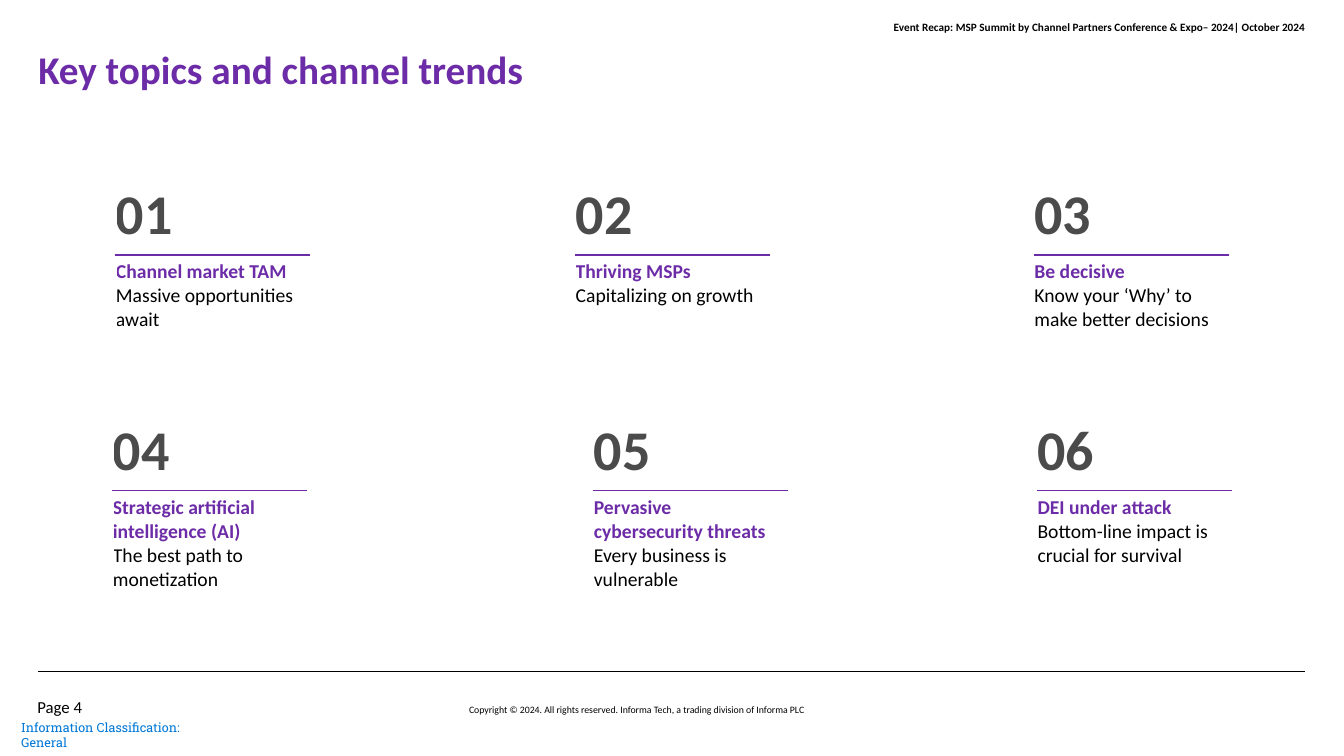
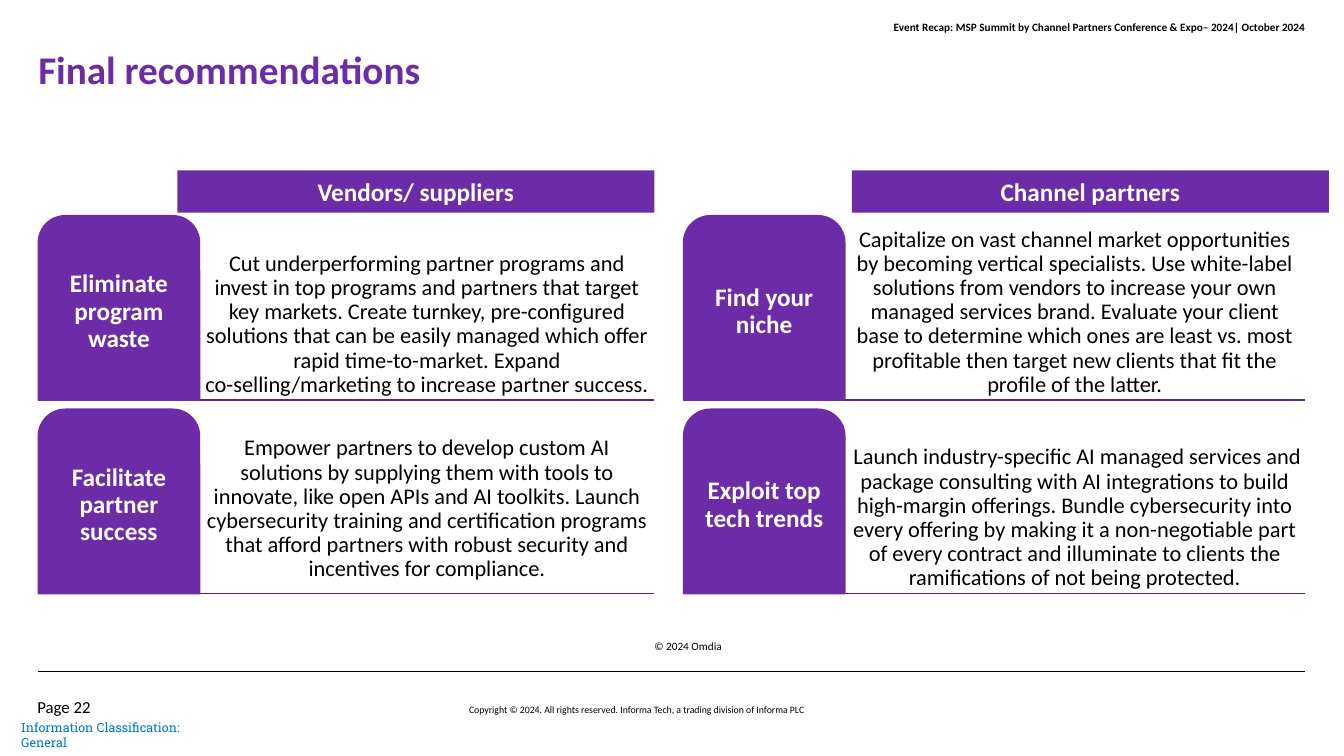
from pptx import Presentation
from pptx.dml.color import RGBColor
from pptx.enum.shapes import MSO_CONNECTOR, MSO_SHAPE
from pptx.enum.text import MSO_ANCHOR, PP_ALIGN
from pptx.oxml import parse_xml
from pptx.oxml.ns import nsdecls
from pptx.util import Inches, Pt

LEFT, CENTER, RIGHT = PP_ALIGN.LEFT, PP_ALIGN.CENTER, PP_ALIGN.RIGHT
TOP, MIDDLE, BOTTOM = MSO_ANCHOR.TOP, MSO_ANCHOR.MIDDLE, MSO_ANCHOR.BOTTOM
STRAIGHT = MSO_CONNECTOR.STRAIGHT
RECT, TAB = MSO_SHAPE.RECTANGLE, MSO_SHAPE.ROUND_2_SAME_RECTANGLE
rgb = RGBColor.from_string

PURPLE, DARK_PURPLE, GRAY = "6D2CA7", "572386", "4B4B4B"
BLACK, WHITE, BLUE = "000000", "FFFFFF", "0078D7"
SANS, SLAB = "Calibri", "Roboto Slab"
MARGIN, EDGE = 0.38, 12.94  # left and right content limits

prs = Presentation()
prs.slide_width, prs.slide_height = Inches(13.33), Inches(7.5)


def write(tf, lines, size, align=LEFT, anchor=TOP, inset=0, spacing=1, font=SANS):
    """Fill a text frame; each line is (text, colour, bold)."""
    tf.word_wrap = True
    tf.vertical_anchor = anchor
    tf.margin_left = tf.margin_right = tf.margin_top = tf.margin_bottom = Inches(inset)
    for i, (text, color, bold) in enumerate(lines):
        p = tf.paragraphs[0] if i == 0 else tf.add_paragraph()
        p.alignment, p.line_spacing = align, spacing
        r = p.add_run()
        r.text = text
        r.font.name, r.font.size, r.font.bold = font, Pt(size), bold
        r.font.color.rgb = rgb(color)


def rule(s, x1, x2, y, color):
    """Draw a horizontal line."""
    line = s.shapes.add_connector(STRAIGHT, Inches(x1), Inches(y), Inches(x2), Inches(y))
    line.line.color.rgb, line.line.width = rgb(color), Pt(1)
    line._element.spPr.append(parse_xml(f"<a:effectLst {nsdecls('a')}/>"))


# Title, header and footer of every slide
slides = []
for title, page in [("Key topics and channel trends", 4), ("Final recommendations", 22)]:
    s = prs.slides.add_slide(prs.slide_layouts[6])
    slides.append(s)
    rule(s, MARGIN, EDGE, 6.66, BLACK)
    frame_texts = [
        ((MARGIN, 0.52, EDGE - MARGIN, 0.75), title, PURPLE, True, 28, LEFT, TOP, 0.85, SANS),
        ((6.83, 0, 6.12, 0.54),
         "Event Recap: MSP Summit by Channel Partners Conference & Expo– 2024| October 2024",
         BLACK, True, 8, RIGHT, MIDDLE, 1, SANS),
        ((3.85, 6.84, 4.93, 0.26),
         "Copyright © 2024. All rights reserved. Informa Tech, a trading division of Informa PLC",
         BLACK, False, 7, CENTER, BOTTOM, 0.85, SANS),
        ((0.37, 6.71, 0.99, 0.4), f"Page {page}", BLACK, False, 12, LEFT, BOTTOM, 0.85, SANS),
        ((0.21, 7.14, 2.03, 0.15), "Information Classification: General",
         BLUE, False, 9, LEFT, TOP, 1, SLAB),
    ]
    for box, text, color, bold, size, align, anchor, spacing, font in frame_texts:
        tf = s.shapes.add_textbox(*map(Inches, box)).text_frame
        write(tf, [(text, color, bold)], size, align, anchor, spacing=spacing, font=font)

topics_slide, advice_slide = slides

# Slide 1: numbered topics, three to a row
TOPIC_TOPS, TOPIC_W, TOPIC_ROW = (1.51, 3.85), 1.92, 1.02
topics = [
    (1.15, "Channel market TAM", "Massive opportunities await"),
    (5.71, "Thriving MSPs", "Capitalizing on growth"),
    (10.26, "Be decisive", "Know your ‘Why’ to make better decisions"),
    (1.12, "Strategic artificial intelligence (AI)", "The best path to monetization"),
    (5.89, "Pervasive cybersecurity threats", "Every business is vulnerable"),
    (10.29, "DEI under attack", "Bottom-line impact is crucial for survival"),
]
for i, (x, heading, detail) in enumerate(topics):
    table = topics_slide.shapes.add_table(
        2, 1, Inches(x), Inches(TOPIC_TOPS[i // 3]), Inches(TOPIC_W), Inches(2 * TOPIC_ROW)).table
    table.first_row = table.horz_banding = False
    number, body = table.cell(0, 0), table.cell(1, 0)
    write(number.text_frame, [(f"{i + 1:02d}", GRAY, True)], 40)
    write(body.text_frame, [(heading, PURPLE, True), (detail, BLACK, False)], 14)
    number.vertical_anchor = BOTTOM
    for cell, ruled_side in ((number, "B"), (body, "T")):
        cell.margin_left, cell.margin_right = 0, Inches(0.1)
        cell.margin_top = cell.margin_bottom = Inches(0.05)
        for side in "LRTB":
            color = PURPLE if side == ruled_side else WHITE
            cell._tc.get_or_add_tcPr().append(parse_xml(
                f'<a:ln{side} {nsdecls("a")} w="12700"><a:solidFill>'
                f'<a:srgbClr val="{color}"/></a:solidFill></a:ln{side}>'))
        cell.fill.background()

# Slide 2: two panels, each with a header and two tabbed rows
ROW_TOP, ROW_H, ROW_STEP = 2.14, 1.83, 1.92
TAB_W, HEADER_W = 1.6, 4.73
panels = [  # left, right, header left, header, rows of (tab, text, lift above rule)
    (MARGIN, 6.49, 1.76, "Vendors/ suppliers", [
        ("Eliminate program waste",
         "Cut underperforming partner programs and invest in top programs and partners that "
         "target key markets. Create turnkey, pre-configured solutions that can be easily "
         "managed which offer rapid time-to-market. Expand co-selling/marketing to increase "
         "partner success.", 0),
        ("Facilitate partner success",
         "Empower partners to develop custom AI solutions by supplying them with tools to "
         "innovate, like open APIs and AI toolkits. Launch cybersecurity training and "
         "certification programs that afford partners with robust security and incentives "
         "for compliance.", 0.09),
    ]),
    (6.78, EDGE, 8.45, "Channel partners", [
        ("Find your niche",
         "Capitalize on vast channel market opportunities by becoming vertical specialists. "
         "Use white-label solutions from vendors to increase your own managed services brand. "
         "Evaluate your client base to determine which ones are least vs. most profitable "
         "then target new clients that fit the profile of the latter.", 0),
        ("Exploit top tech trends",
         " Launch industry-specific AI managed services and package consulting with AI "
         "integrations to build high-margin offerings. Bundle cybersecurity into every "
         "offering by making it a non-negotiable part of every contract and illuminate to "
         "clients the ramifications of not being protected.", 0),
    ]),
]
for left, right, header_x, header, rows in panels:
    blocks = [(RECT, (header_x, 1.69, HEADER_W, 0.42), header)]
    for i, (label, text, lift) in enumerate(rows):
        y = ROW_TOP + i * ROW_STEP
        rule(advice_slide, left, right, y + ROW_H, DARK_PURPLE)
        blocks.append((TAB, (left, y, TAB_W, ROW_H), label))
        box = (left + TAB_W, y + lift, right - left - TAB_W, ROW_H - 2 * lift)
        tf = advice_slide.shapes.add_textbox(*map(Inches, box)).text_frame
        write(tf, [(text, BLACK, False)], 16, CENTER, BOTTOM, 0.03, 0.9)
    for kind, box, label in blocks:
        sp = advice_slide.shapes.add_shape(kind, *map(Inches, box))
        sp.shadow.inherit = False
        sp.fill.solid()
        sp.fill.fore_color.rgb = rgb(PURPLE)
        if kind == TAB:
            sp.line.color.rgb, sp.line.width = rgb(PURPLE), Pt(1)
        else:
            sp.line.fill.background()
        write(sp.text_frame, [(label, WHITE, True)], 18, CENTER, MIDDLE, 0.04,
              0.9 if kind == TAB else 1)

# Source credit
tf = advice_slide.shapes.add_textbox(*map(Inches, (6.4, 6.24, 0.76, 0.24))).text_frame
write(tf, [("© 2024 Omdia", BLACK, False)], 8, RIGHT, BOTTOM)

prs.save("out.pptx")
